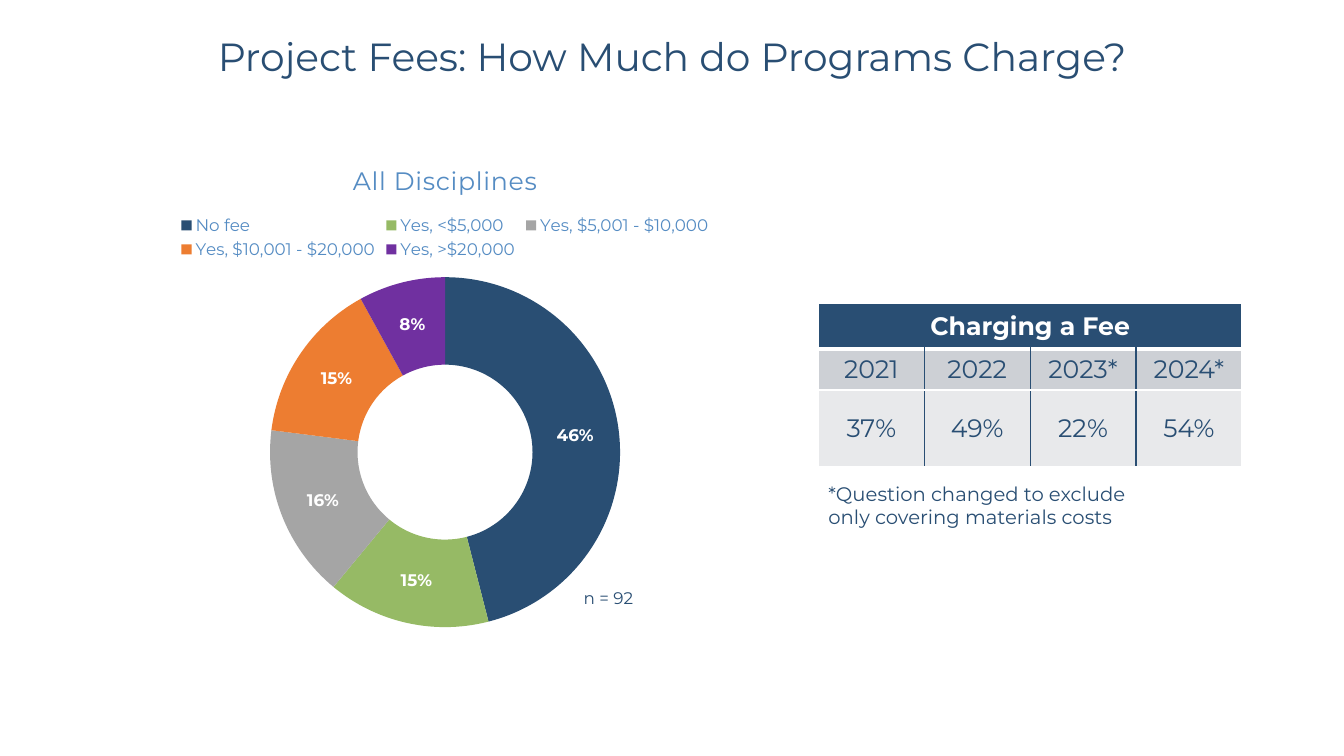
from lxml import etree
from pptx import Presentation
from pptx import util as u
from pptx.chart import data
from pptx.dml import color
from pptx.enum import chart as charts, text as texts
from pptx.oxml import ns

WIDE, HIGH = u.Inches(13.33), u.Inches(7.5)
FACE = "Montserrat"
HUES = {
    "navy": "294E73", "sky": "558CC3", "white": "FFFFFF", "green": "96BA65",
    "gray": "A5A5A5", "orange": "ED7D31", "purple": "7030A0",
    "mid": "CDD0D5", "pale": "E8E9EB",
}
FEES = [
    ("No fee", 46, "navy"),
    ("Yes, <$5,000", 15, "green"),
    ("Yes, $5,001 - $10,000", 16, "gray"),
    ("Yes, $10,001 - $20,000", 15, "orange"),
    ("Yes, >$20,000", 8, "purple"),
]
YEARS = [("2021", "37%"), ("2022", "49%"), ("2023*", "22%"), ("2024*", "54%")]


def hue(name):
    return color.RGBColor.from_string(HUES[name])


def area(left, top, width, height):
    return (int(WIDE * left / 100), int(HIGH * top / 100),
            int(WIDE * width / 100), int(HIGH * height / 100))


def style(font, size, tint="navy", bold=False):
    font.name, font.size, font.bold = FACE, u.Pt(size), bold
    font.color.rgb = hue(tint)


def write(frame, words, size=18, tint="navy", bold=False, align="LEFT",
          anchor="TOP", wrap=True):
    frame.word_wrap = wrap
    frame.vertical_anchor = getattr(texts.MSO_ANCHOR, anchor)
    para = frame.paragraphs[0]
    para.alignment = getattr(texts.PP_ALIGN, align)
    run = para.add_run()
    run.text = words
    style(run.font, size, tint, bold)
    return run


def head(slide, words, place):
    title = slide.shapes.title
    title.left, title.top, title.width, title.height = place
    write(title.text_frame, words, size=28, align="CENTER", anchor="MIDDLE",
          wrap=False)


def note(slide, words, place, size):
    write(slide.shapes.add_textbox(*place).text_frame, words, size=size)


def ring(slide, place):
    fees = data.CategoryChartData()
    fees.categories = [name for name, _, _ in FEES]
    fees.add_series("Series 1", [value for _, value, _ in FEES])
    chart = slide.shapes.add_chart(
        charts.XL_CHART_TYPE.DOUGHNUT, *place, fees).chart
    style(chart.font, 10)
    chart.has_title = True
    run = write(chart.chart_title.text_frame, "All Disciplines", tint="sky",
                align="CENTER")
    run.font._element.set("spc", "50")
    chart.has_legend = True
    chart.legend.position = charts.XL_LEGEND_POSITION.TOP
    chart.legend.include_in_layout = False
    style(chart.legend.font, 12, "sky")
    plot = chart.plots[0]
    for spot, (_, _, tint) in enumerate(FEES):
        form = plot.series[0].points[spot].format
        form.fill.solid()
        form.fill.fore_color.rgb = hue(tint)
        form.line.fill.background()
    labels = plot.series[0].data_labels
    labels.show_percentage = True
    labels.show_value = False
    labels.number_format, labels.number_format_is_linked = "0%", False
    style(labels.font, 12, "white", True)


def edge(cell, side, tint, width=1):
    line = etree.SubElement(cell._tc.get_or_add_tcPr(), ns.qn(f"a:ln{side}"),
                            w=str(u.Pt(width)))
    fill = etree.SubElement(line, ns.qn("a:solidFill"))
    etree.SubElement(fill, ns.qn("a:srgbClr"), val=HUES[tint])


def grid(slide, place):
    count = len(YEARS)
    table = slide.shapes.add_table(3, count, *place).table
    for row, share in zip(table.rows, (0.28, 0.25, 0.47)):
        row.height = int(place[3] * share)
    for r, fill in enumerate(("navy", "mid", "pale")):
        for c in range(count):
            cell = table.cell(r, c)
            edge(cell, "L", "navy" if r and c else "white")
            edge(cell, "R", "navy" if r and c < count - 1 else "white")
            edge(cell, "T", "white", 3 if r == 1 else 1)
            edge(cell, "B", "white", 1 if r else 3)
            cell.fill.solid()
            cell.fill.fore_color.rgb = hue(fill)
    top = table.cell(0, 0)
    top.merge(table.cell(0, count - 1))
    top.vertical_anchor = texts.MSO_ANCHOR.MIDDLE
    write(top.text_frame, "Charging a Fee", tint="white", bold=True,
          align="CENTER", anchor="MIDDLE")
    for c, pair in enumerate(YEARS):
        for r, words in enumerate(pair, 1):
            cell = table.cell(r, c)
            anchor = "BOTTOM" if r == 1 else "MIDDLE"
            cell.vertical_anchor = getattr(texts.MSO_ANCHOR, anchor)
            write(cell.text_frame, words, align="CENTER", anchor=anchor)


def main():
    deck = Presentation()
    deck.slide_width, deck.slide_height = WIDE, HIGH
    slide = deck.slides.add_slide(deck.slide_layouts[5])
    head(slide, "Project Fees: How Much do Programs Charge?",
         area(15.08, 3.6, 69.84, 7.6))
    ring(slide, area(5.33, 18.93, 55.57, 65.87))
    note(slide, "n = 92", area(42.69, 77.07, 6, 4), 12)
    grid(slide, area(60.9, 40.13, 31.5, 21.6))
    note(slide, "*Question changed to exclude only covering materials costs",
         area(60.9, 63.07, 27, 7.6), 14)
    deck.save("out.pptx")


if __name__ == "__main__":
    main()
